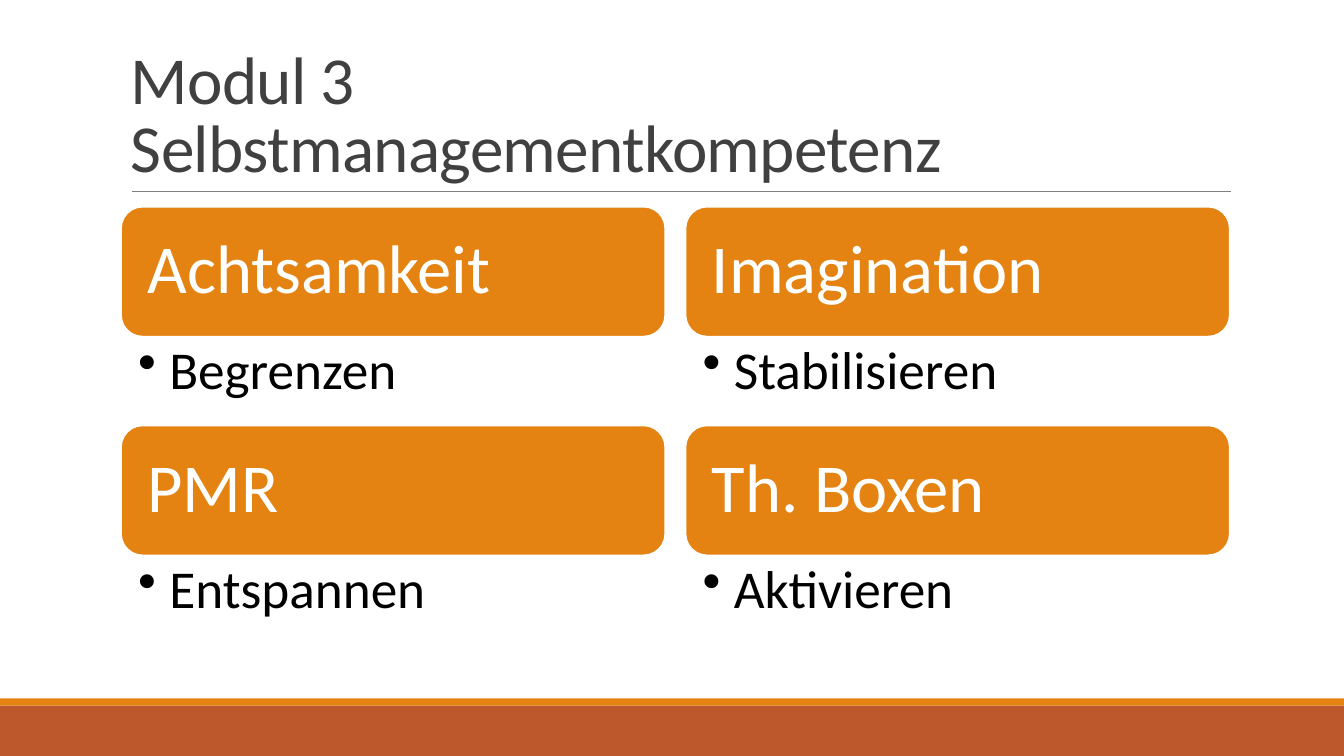
from lxml.etree import SubElement as Sub
from pptx import Presentation as Pres
from pptx.dml.color import RGBColor as RGB
from pptx.enum.shapes import MSO_CONNECTOR as Conn, MSO_SHAPE as Form
from pptx.enum.text import MSO_ANCHOR as Anchor, PP_ALIGN as Align
from pptx.oxml.ns import qn
from pptx.util import Emu, Inches, Pt

ORANGE = RGB(0xE4, 0x83, 0x12)
RUST = RGB(0xBD, 0x58, 0x2C)
GREY = RGB(0x80, 0x80, 0x80)
DARK = RGB(0x40, 0x40, 0x40)
BLACK = RGB(0, 0, 0)
WHITE = RGB(0xFF, 0xFF, 0xFF)
COLS, ROWS = 40, 30
LEFT, TOP = 3.6, 8.2
WIDE, STEP = 16.2, 16.8
HIGH, DROP = 5.16, 8.68
TOPICS = [
    [("Achtsamkeit", "Begrenzen"), ("Imagination", "Stabilisieren")],
    [("PMR", "Entspannen"), ("Th. Boxen", "Aktivieren")],
]


class Board:
    font = "Calibri"

    def __init__(self, deck):
        self.col = deck.slide_width / COLS
        self.row = deck.slide_height / ROWS
        self.shapes = deck.slides.add_slide(deck.slide_layouts[6]).shapes

    def cells(self, x, y, wide, high):
        return (Emu(round(x * self.col)), Emu(round(y * self.row)),
                Emu(round(wide * self.col)), Emu(round(high * self.row)))

    def label(self, shape, text, size, color, space, pad, anchor):
        frame = shape.text_frame
        frame.word_wrap = True
        frame.vertical_anchor = anchor
        (frame.margin_left, frame.margin_top,
         frame.margin_right, frame.margin_bottom) = map(Inches, pad)
        par = frame.paragraphs[0]
        for part, line in enumerate(text.splitlines()):
            if part:
                par.add_line_break()
            par.add_run().text = line
        par.alignment = Align.LEFT
        par.line_spacing = space
        par.font.name = self.font
        par.font.size = Pt(size)
        par.font.color.rgb = color
        return par

    def block(self, form, area, fill, edge=None):
        shape = self.shapes.add_shape(form, *self.cells(*area))
        shape.shadow.inherit = False
        shape.fill.solid()
        shape.fill.fore_color.rgb = fill
        if edge is None:
            shape.line.fill.background()
        else:
            shape.line.color.rgb = edge
            shape.line.width = Pt(1.25)
        return shape

    def rule(self, x, y, end):
        left, top, right, _ = self.cells(x, y, end, 0)
        line = self.shapes.add_connector(Conn.STRAIGHT, left, top, right, top)
        line.line.color.rgb = GREY
        line.line.width = Pt(0.5)
        Sub(line._element.spPr, qn("a:effectLst"))

    def title(self, text, area):
        box = self.shapes.add_textbox(*self.cells(*area))
        par = self.label(box, text, 48, DARK, 0.85,
                         (0.1, 0.05, 0.1, 0.05), Anchor.BOTTOM)
        for run in par.runs:
            run._r.get_or_add_rPr().set("spc", "-50")

    def card(self, text, area):
        shape = self.block(Form.ROUNDED_RECTANGLE, area, ORANGE, WHITE)
        self.label(shape, text, 49, WHITE, 0.9, (0.2,) * 4, Anchor.MIDDLE)

    def bullet(self, text, area):
        box = self.shapes.add_textbox(*self.cells(*area))
        par = self.label(box, text, 38, BLACK, 0.9,
                         (0.17, 0.07, 0.38, 0.07), Anchor.TOP)
        props = par._p.get_or_add_pPr()
        props.set("marL", str(Inches(0.31)))
        props.set("indent", str(-Inches(0.31)))
        mark = props.makeelement(qn("a:buChar"), {"char": "•"})
        props.find(qn("a:defRPr")).addprevious(mark)


def main():
    deck = Pres()
    deck.slide_width, deck.slide_height = Inches(13.33), Inches(7.5)
    board = Board(deck)
    board.block(Form.RECTANGLE, (0, 28, COLS, 2), RUST)
    board.block(Form.RECTANGLE, (0, 27.72, COLS, 0.28), ORANGE)
    board.rule(3.93, 7.6, 36.63)
    board.title("""Modul 3
Selbstmanagementkompetenz""", (LEFT, 1.24, 33, 6.36))
    for row, line in enumerate(TOPICS):
        for col, (head, goal) in enumerate(line):
            x, y = LEFT + col * STEP, TOP + row * DROP
            board.card(head, (x, y, WIDE, HIGH))
            board.bullet(goal, (x, y + HIGH, WIDE, DROP - HIGH))
    deck.save("out.pptx")


if __name__ == "__main__":
    main()
